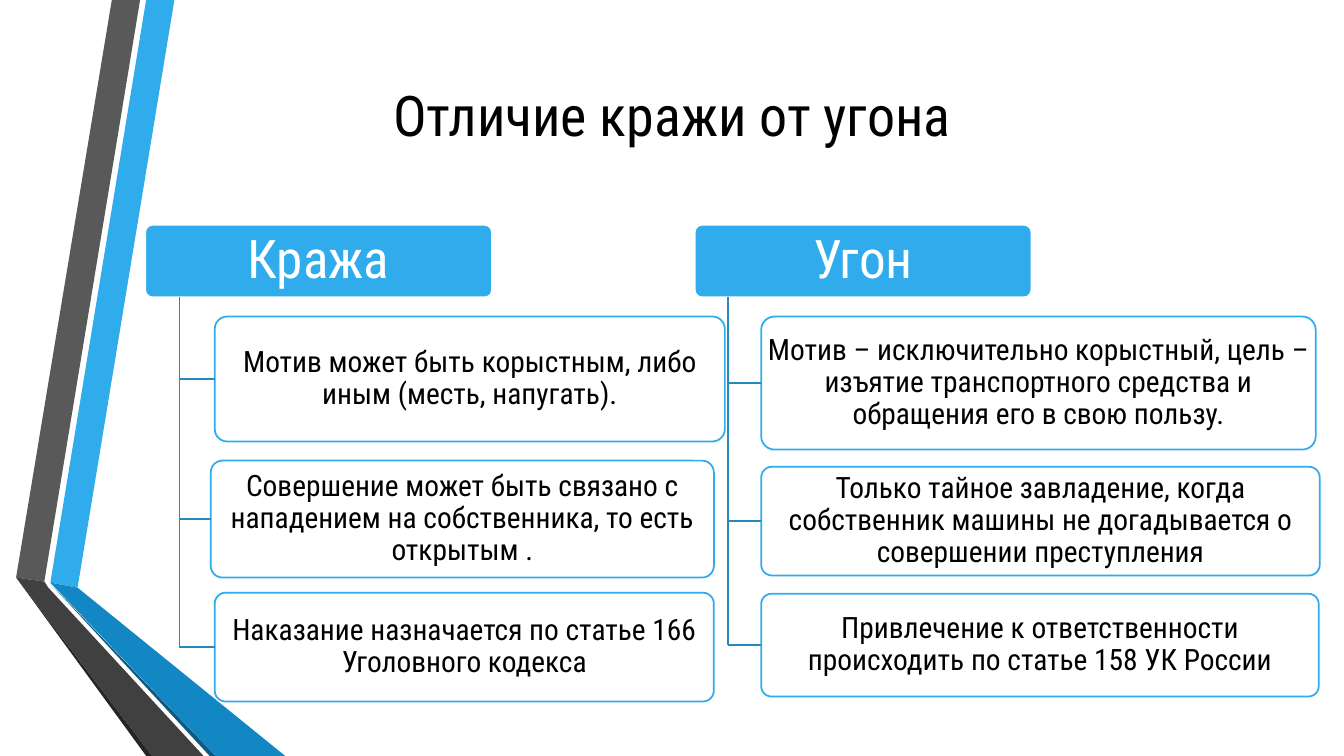
from dataclasses import dataclass

from lxml.etree import SubElement
from pptx import Presentation
from pptx.dml.color import RGBColor
from pptx.enum.shapes import MSO_CONNECTOR, MSO_SHAPE
from pptx.enum.text import MSO_ANCHOR, PP_ALIGN
from pptx.oxml.ns import qn
from pptx.util import Pt

EMU_PER_PX = 9144  # 100 px to the inch


@dataclass(frozen=True)
class Theme:
    font: str = "Roboto Condensed"
    title_size: int = 40
    header_size: int = 38
    body_size: int = 21
    line_width: float = 1.25
    text: str = "000000"
    white: str = "FFFFFF"
    accent: str = "30ACEC"
    branch: str = "268ABD"
    gray: str = "595959"
    dark_gray: str = "404040"
    gray_shade: str = "262626"
    blue: str = "1287C3"
    blue_shade: str = "0C5A82"


THEME = Theme()

RIBBONS = [
    (THEME.accent, [(50, 578), (77, 583), (173, 0), (145, 0)]),
    (THEME.gray, [(139, 0), (111, 0), (16, 573), (44, 577)]),
    (THEME.gray_shade, [(16, 573), (145, 750), (151, 750)]),
    (THEME.blue_shade, [(50, 579), (208, 750), (214, 750)]),
    (THEME.blue, [(50, 578), (214, 750), (283, 750), (77, 583)]),
    (THEME.dark_gray, [(202, 750), (48, 583), (44, 577), (16, 573), (151, 750)]),
]

HEADER_TOP, HEADER_HEIGHT = 223, 72

# Header, left, width, trunk x, then reasons as (text, left, top, width, height)
COLUMNS = [
    ("Кража", 144, 344, 178, [
        ("Мотив может быть корыстным, либо иным (месть, напугать).",
         213, 314, 506, 124),
        ("Совершение может быть связано с нападением на собственника, то есть открытым .",
         209, 457, 499, 116),
        ("Наказание назначается по статье 166 Уголовного кодекса",
         213, 588, 495, 108),
    ]),
    ("Угон", 689, 334, 722, [
        ("Мотив – исключительно корыстный, цель – изъятие транспортного средства "
         "и обращения его в свою пользу.",
         755, 314, 550, 132),
        ("Только тайное завладение, когда собственник машины не догадывается "
         "о совершении преступления",
         755, 463, 554, 108),
        ("Привлечение к ответственности происходить по статье 158 УК России",
         755, 589, 553, 102),
    ]),
]


def px(*lengths):
    return [length * EMU_PER_PX for length in lengths]


def rgb(color):
    return RGBColor.from_string(color)


class SlideBuilder:
    def __init__(self, slide, theme):
        self.slide = slide
        self.theme = theme

    def ribbon(self, color, points):
        outline = self.slide.shapes.build_freeform(*points[0], scale=EMU_PER_PX)
        outline.add_line_segments(points[1:], close=True)
        band = outline.convert_to_shape()
        band.shadow.inherit = False
        band.fill.solid()
        band.fill.fore_color.rgb = rgb(color)
        band.line.fill.background()

    def label(self, shape, text, size, color, spacing=0.9):
        frame = shape.text_frame
        frame.word_wrap = True
        frame.vertical_anchor = MSO_ANCHOR.MIDDLE
        frame.margin_left = frame.margin_right = 0
        frame.margin_top = frame.margin_bottom = 0
        paragraph = frame.paragraphs[0]
        paragraph.alignment = PP_ALIGN.CENTER
        paragraph.line_spacing = spacing
        run = paragraph.add_run()
        run.text = text
        run.font.name = self.theme.font
        run.font.size = Pt(size)
        run.font.color.rgb = rgb(color)

    def title(self, text, *box):
        heading = self.slide.shapes.add_textbox(*px(*box))
        self.label(heading, text, self.theme.title_size, self.theme.text, 1.0)

    def card(self, box, fill, line):
        card = self.slide.shapes.add_shape(MSO_SHAPE.ROUNDED_RECTANGLE, *px(*box))
        card.adjustments[0] = 0.1
        card.shadow.inherit = False
        card.fill.solid()
        card.fill.fore_color.rgb = rgb(fill)
        card.line.color.rgb = rgb(line)
        card.line.width = Pt(self.theme.line_width)
        return card

    def header(self, text, *box):
        card = self.card(box, self.theme.accent, self.theme.white)
        self.label(card, text, self.theme.header_size, self.theme.white)

    def reason(self, text, *box):
        """Add a slightly see-through outlined card."""
        card = self.card(box, self.theme.white, self.theme.accent)
        color = card._element.spPr.find(qn("a:solidFill"))[0]
        SubElement(color, qn("a:alpha"), val="90000")
        self.label(card, text, self.theme.body_size, self.theme.text)
        return card

    def connector(self, *ends):
        line = self.slide.shapes.add_connector(MSO_CONNECTOR.STRAIGHT, *px(*ends))
        line.line.color.rgb = rgb(self.theme.branch)
        line.line.width = Pt(self.theme.line_width)
        SubElement(line._element.spPr, qn("a:effectLst"))
        return line

    def column(self, name, left, width, trunk, reasons):
        """Add a header with its reasons hanging from a vertical trunk."""
        self.header(name, left, HEADER_TOP, width, HEADER_HEIGHT)
        for text, *box in reasons:
            card = self.reason(text, *box)
            card_left, top, _, height = box
            middle = top + height // 2
            self.connector(trunk, middle, card_left, middle).end_connect(card, 1)
        self.connector(trunk, HEADER_TOP + HEADER_HEIGHT, trunk, middle)


def main():
    presentation = Presentation()
    presentation.slide_width, presentation.slide_height = px(1333, 750)
    slide = presentation.slides.add_slide(presentation.slide_layouts[6])
    builder = SlideBuilder(slide, THEME)
    for color, points in RIBBONS:
        builder.ribbon(color, points)
    builder.title("Отличие кражи от угона", 0, 17, 1333, 192)
    for column in COLUMNS:
        builder.column(*column)
    presentation.save("out.pptx")


if __name__ == "__main__":
    main()
